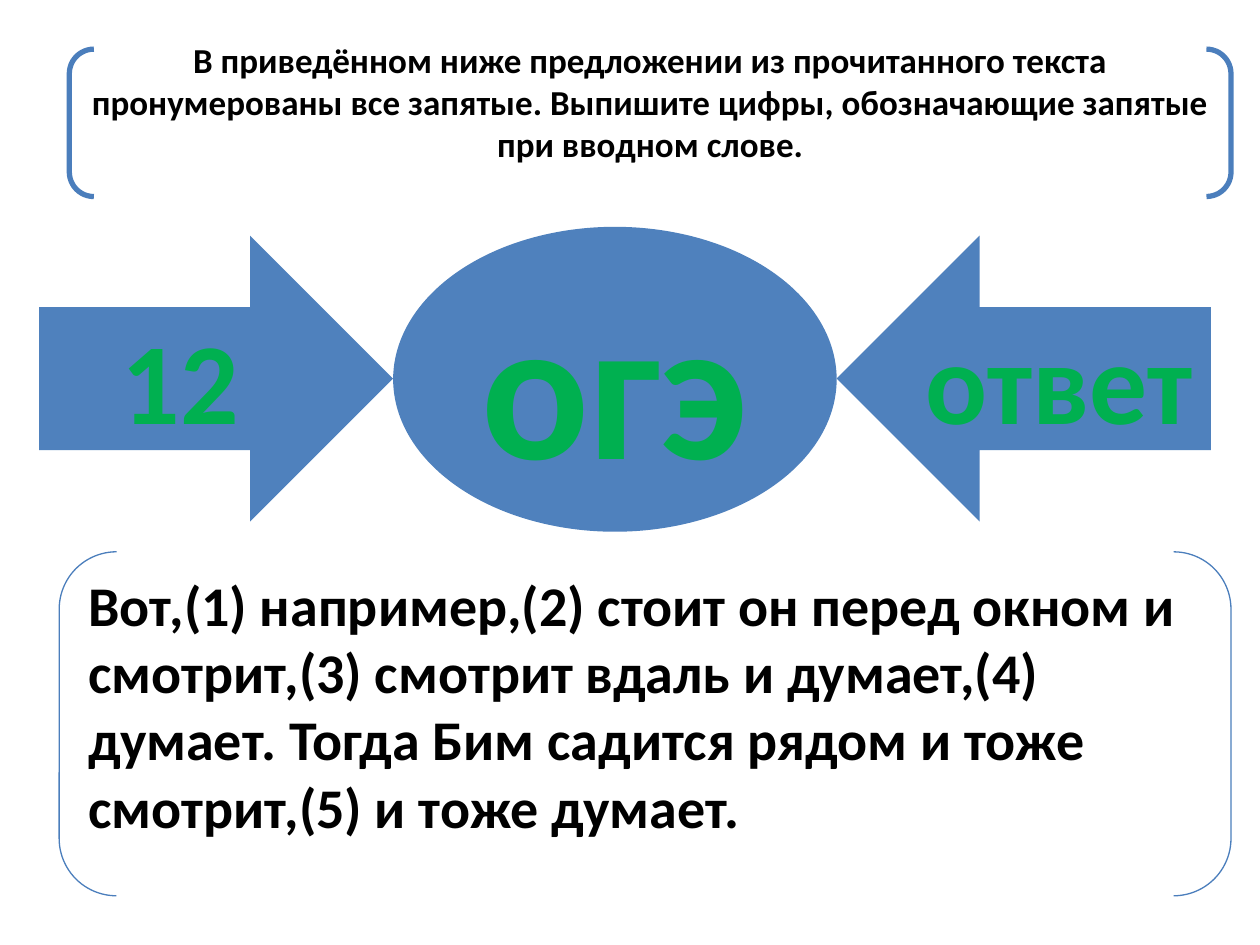
from dataclasses import dataclass

from pptx import Presentation
from pptx.dml.color import RGBColor
from pptx.enum.shapes import MSO_SHAPE as SHAPE
from pptx.enum.text import MSO_ANCHOR as ANCHOR, PP_ALIGN as ALIGN
from pptx.util import Inches, Pt

BLUE, OUTLINE, GREEN, BLACK = "4F81BD", "4B7EBC", "00B050", "000000"


@dataclass
class Figure:
    kind: SHAPE
    box: tuple[float, float, float, float]
    text: str
    size: int
    color: str = GREEN
    align: ALIGN = ALIGN.CENTER
    line_width: float = 0  # zero means a filled figure without an outline
    bottom: float = 0.05


FIGURES = [
    Figure(SHAPE.DOUBLE_BRACKET, (0.55, 0.39, 9.22, 1.17),
           "В приведённом ниже предложении из прочитанного текста "
           "пронумерованы все запятые. Выпишите цифры, обозначающие "
           "запятые при вводном слове.",
           20, BLACK, line_width=3, bottom=0.38),
    Figure(SHAPE.DOUBLE_BRACKET, (0.47, 4.38, 9.3, 2.73),
           "Вот,(1) например,(2) стоит он перед окном и смотрит,(3) "
           "смотрит вдаль и думает,(4) думает. Тогда Бим садится рядом "
           "и тоже смотрит,(5) и тоже думает.",
           32, BLACK, ALIGN.LEFT, line_width=0.75, bottom=0.35),
    Figure(SHAPE.RIGHT_ARROW, (0.31, 1.87, 2.81, 2.27), "12", 66),
    Figure(SHAPE.LEFT_ARROW, (6.64, 1.87, 2.97, 2.27), "ответ", 66),
    Figure(SHAPE.OVAL, (3.12, 1.8, 3.52, 2.42), "огэ", 115),
]


def rgb(value: str) -> RGBColor:
    return RGBColor.from_string(value)


def draw_figure(slide, figure: Figure) -> None:
    sp = slide.shapes.add_shape(figure.kind, *map(Inches, figure.box))
    sp.shadow.inherit = False
    if figure.line_width:
        sp.fill.background()
        sp.line.color.rgb = rgb(OUTLINE)
        sp.line.width = Pt(figure.line_width)
    else:
        sp.fill.solid()
        sp.fill.fore_color.rgb = rgb(BLUE)
        sp.line.fill.background()

    tf = sp.text_frame
    tf.text = figure.text
    tf.word_wrap = True
    tf.vertical_anchor = ANCHOR.MIDDLE
    tf.margin_bottom = Inches(figure.bottom)
    p = tf.paragraphs[0]
    p.alignment = figure.align
    font = p.runs[0].font
    font.name = "Calibri"
    font.size = Pt(figure.size)
    font.bold = True
    font.color.rgb = rgb(figure.color)


def main() -> None:
    prs = Presentation()
    prs.slide_width, prs.slide_height = Inches(10), Inches(7.5)
    slide = prs.slides.add_slide(prs.slide_layouts[6])
    for figure in FIGURES:
        draw_figure(slide, figure)
    prs.save("out.pptx")


if __name__ == "__main__":
    main()
